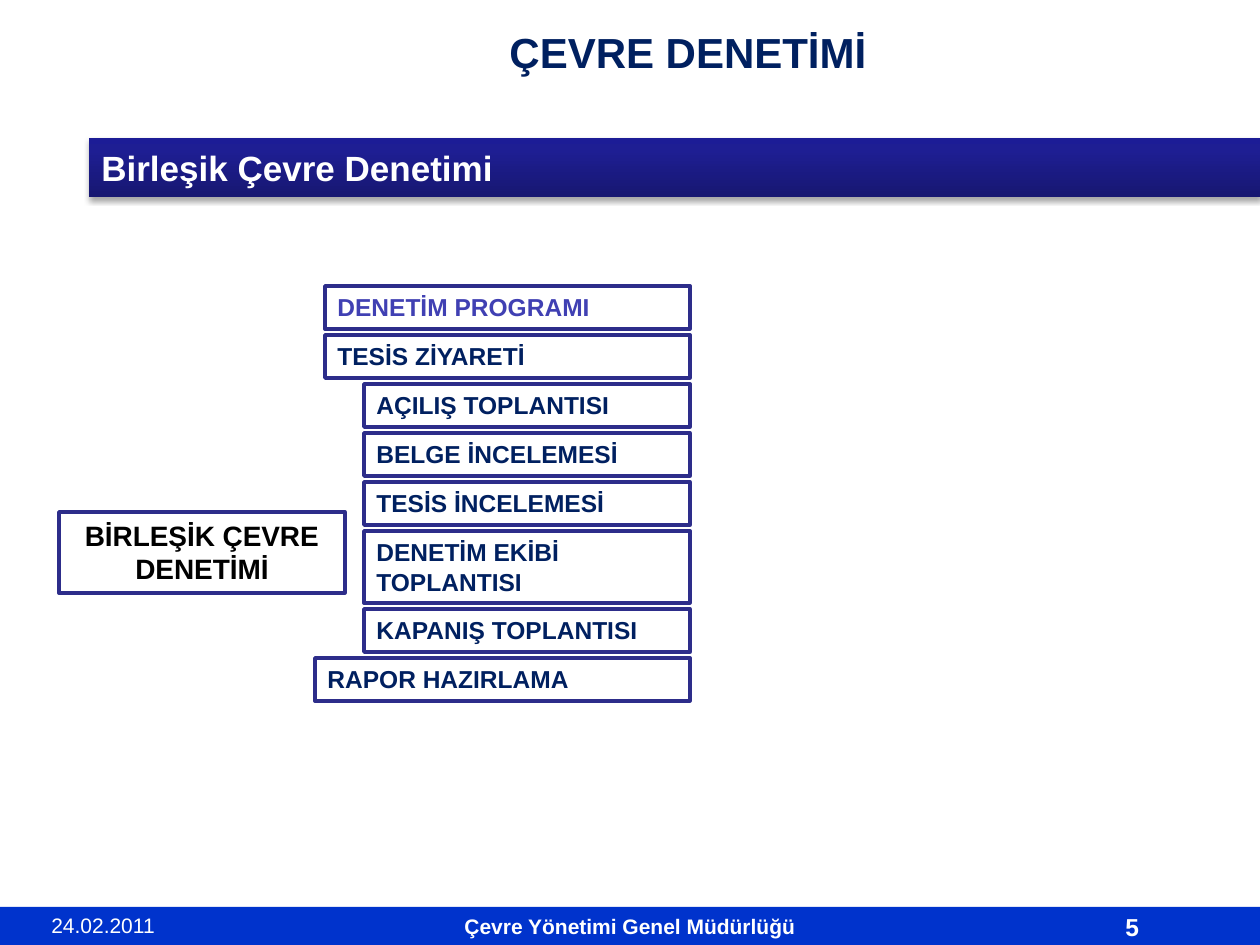
import pptx
import pptx.dml.color
import pptx.enum.shapes
import pptx.enum.text
import pptx.oxml
import pptx.oxml.ns
import pptx.util
from dataclasses import dataclass

EMU_PER_PX = 914400 / 126
SLIDE_WIDTH, SLIDE_HEIGHT = 1260, 945
ALIGN = pptx.enum.text.PP_ALIGN
ANCHOR = pptx.enum.text.MSO_ANCHOR


@dataclass(frozen=True)
class Theme:
    """Colours, font and type sizes of the slide."""
    font: str = "Arial"
    white: str = "FFFFFF"
    black: str = "000000"
    navy: str = "002060"
    outline: str = "2D2D8A"
    footer: str = "0033CC"
    band: tuple = ((0, "171771"), (80, "1E1E93"), (100, "1C1C96"))
    accent: tuple = ((0, "00005B"), (78, "4040B3"), (100, "EFEFF7"))
    title_size: int = 24
    heading_size: int = 20
    topic_size: int = 16
    step_size: int = 14
    footer_size: int = 12


THEME = Theme()

STEPS = (
    ("DENETİM PROGRAMI", 325, 43, THEME.accent),
    ("TESİS ZİYARETİ", 325, 43, THEME.navy),
    ("AÇILIŞ TOPLANTISI", 364, 43, THEME.navy),
    ("BELGE İNCELEMESİ", 364, 43, THEME.navy),
    ("TESİS İNCELEMESİ", 364, 43, THEME.navy),
    ("DENETİM EKİBİ TOPLANTISI", 364, 72, THEME.navy),
    ("KAPANIŞ TOPLANTISI", 364, 43, THEME.navy),
    ("RAPOR HAZIRLAMA", 315, 43, THEME.navy),
)


def px(length):
    """Turn a length in px into EMU."""
    return pptx.util.Emu(round(length * EMU_PER_PX))


def rgb(colour):
    """Return the RGB colour of a hex string."""
    return pptx.dml.color.RGBColor.from_string(colour)


def parse_part(tag, attributes, content=""):
    """Build one DrawingML element."""
    namespace = pptx.oxml.ns.nsdecls("a")
    return pptx.oxml.parse_xml(f"<a:{tag} {namespace} {attributes}>{content}</a:{tag}>")


def paint(fill, element, colour, angle=90):
    """Apply a solid colour or a sequence of gradient stops."""
    if isinstance(colour, str):
        fill.solid()
        fill.fore_color.rgb = rgb(colour)
        return
    fill.gradient()
    fill.gradient_angle = angle
    stops = element.find(".//" + pptx.oxml.ns.qn("a:gsLst"))
    for stop in list(stops):
        stops.remove(stop)
    for position, value in colour:
        stops.append(parse_part("gs", f'pos="{position * 1000}"', f'<a:srgbClr val="{value}"/>'))


def write(shape, text, size, colour, bold=True, align=ALIGN.LEFT, anchor=ANCHOR.TOP, grow=False):
    """Put formatted text in a shape."""
    frame = shape.text_frame
    frame.word_wrap = True
    frame.vertical_anchor = anchor
    if grow:
        frame.auto_size = pptx.enum.text.MSO_AUTO_SIZE.SHAPE_TO_FIT_TEXT
    paragraph = frame.paragraphs[0]
    paragraph.alignment = align
    run = paragraph.add_run()
    run.text = text
    run.font.name = THEME.font
    run.font.size = pptx.util.Pt(size)
    run.font.bold = bold
    paint(run.font.fill, shape.text_frame._txBody, colour, angle=270)


def add_box(slide, box, fill, outline=None):
    """Add a rectangle without a shadow."""
    rectangle = slide.shapes.add_shape(pptx.enum.shapes.MSO_SHAPE.RECTANGLE, *map(px, box))
    rectangle.shadow.inherit = False
    paint(rectangle.fill, rectangle._element.spPr, fill)
    if outline:
        rectangle.line.color.rgb = rgb(outline)
        rectangle.line.width = pptx.util.Pt(2)
    else:
        rectangle.line.fill.background()
    return rectangle


def add_label(slide, box, text, **text_format):
    """Add a text box."""
    write(slide.shapes.add_textbox(*map(px, box)), text, **text_format)


def add_footer(slide, box):
    """Draw the footer bar with the office, page number and date."""
    left, top, width, height = box
    bar = add_box(slide, box, THEME.footer)
    write(bar, "Çevre Yönetimi Genel Müdürlüğü", THEME.footer_size, THEME.white,
          align=ALIGN.CENTER, grow=True)
    add_label(slide, (left + 1113, top - 1, 98, height + 1), "5",
              size=THEME.step_size, colour=THEME.white)
    add_label(slide, (left + 39, top - 1, 276, height + 1), "24.02.2011",
              size=THEME.footer_size, colour=THEME.white, bold=False)


def add_heading(slide, box):
    """Draw the shaded heading band."""
    band = add_box(slide, box, THEME.band)
    shadow = parse_part(
        "outerShdw", 'blurRad="39370" dist="22860" dir="5400000" rotWithShape="0"',
        f'<a:srgbClr val="{THEME.black}"><a:alpha val="35000"/></a:srgbClr>')
    band._element.spPr.find(pptx.oxml.ns.qn("a:effectLst")).append(shadow)
    write(band, "Birleşik Çevre Denetimi", THEME.heading_size, THEME.white, anchor=ANCHOR.MIDDLE)


def add_topic(slide, box):
    """Draw the box that names the whole process."""
    topic = add_box(slide, box, THEME.white, THEME.outline)
    write(topic, "BİRLEŞİK ÇEVRE DENETİMİ", THEME.topic_size, THEME.black,
          align=ALIGN.CENTER, grow=True)


def add_steps(slide, right, top, gap):
    """Stack the audit steps against a shared right edge."""
    for text, left, height, colour in STEPS:
        step = add_box(slide, (left, top, right - left, height), THEME.white, THEME.outline)
        write(step, text, THEME.step_size, colour, grow=True)
        top += height + gap


def main():
    """Build and save the slide."""
    presentation = pptx.Presentation()
    presentation.slide_width = px(SLIDE_WIDTH)
    presentation.slide_height = px(SLIDE_HEIGHT)
    slide = presentation.slides.add_slide(presentation.slide_layouts[6])
    add_footer(slide, (0, 907, SLIDE_WIDTH, 38))
    add_label(slide, (147, 20, 1082, 63), "ÇEVRE DENETİMİ", size=THEME.title_size,
              colour=THEME.navy, align=ALIGN.CENTER, grow=True)
    add_heading(slide, (89, 138, SLIDE_WIDTH - 89, 59))
    add_topic(slide, (59, 512, 286, 81))
    add_steps(slide, right=690, top=286, gap=6)
    presentation.save("out.pptx")


if __name__ == "__main__":
    main()
